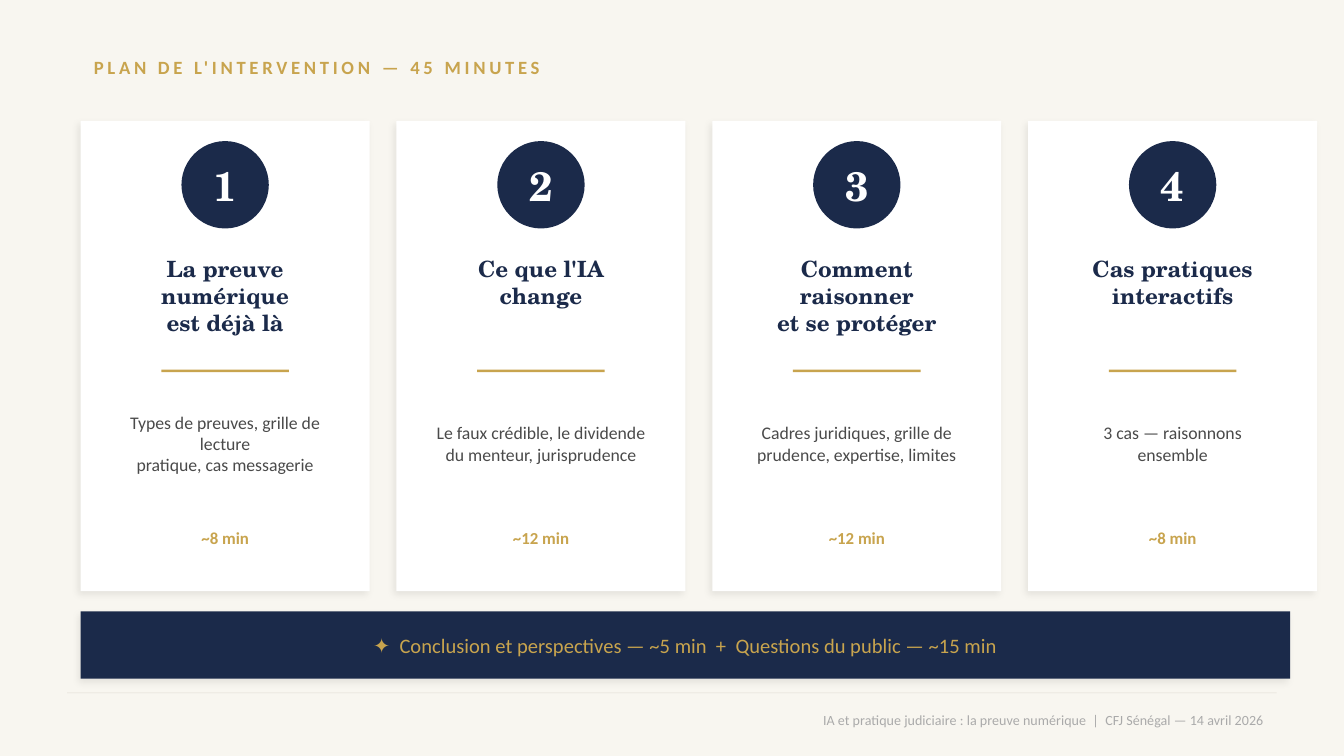
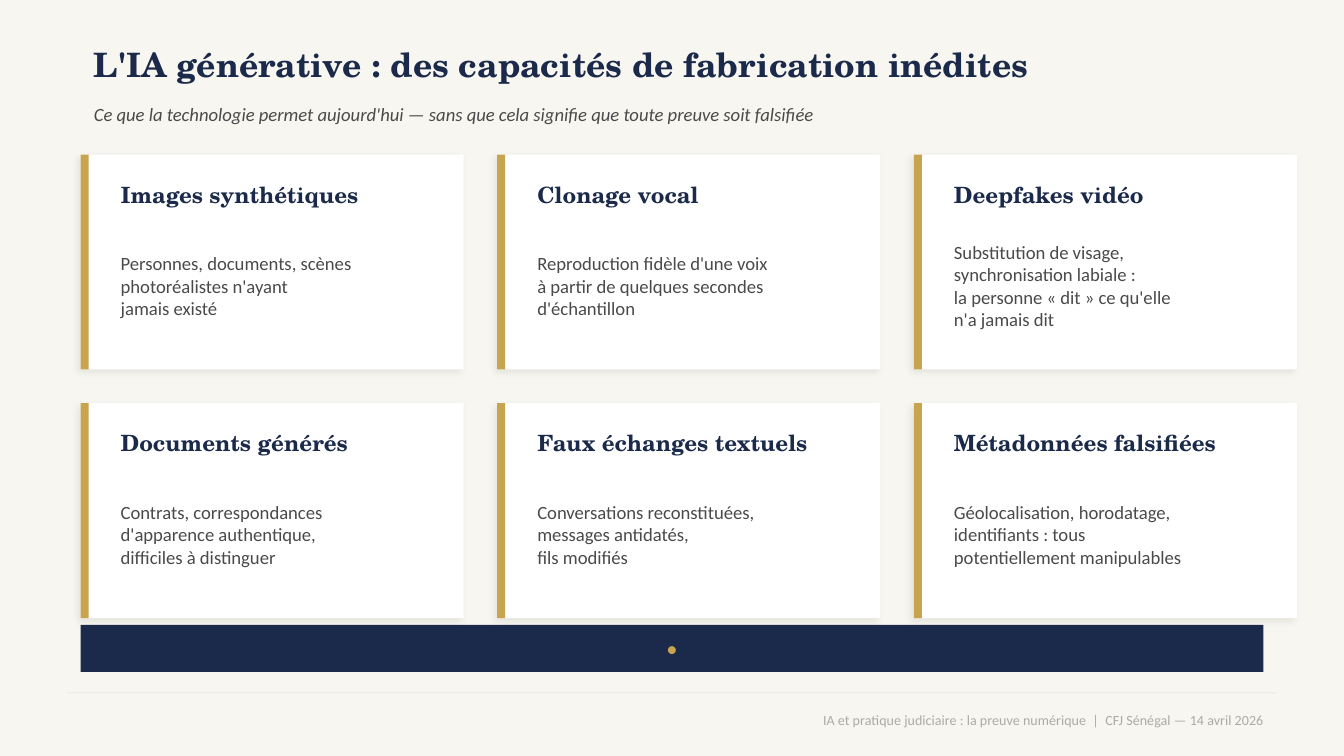
from pptx import Presentation
from pptx.dml.color import RGBColor
from pptx.enum.shapes import MSO_SHAPE
from pptx.enum.text import MSO_ANCHOR, PP_ALIGN
from pptx.oxml import parse_xml
from pptx.oxml.ns import nsdecls, qn
from pptx.util import Inches, Pt

COLORS = {
    "paper": "F8F6F0", "rule": "EFECE5", "white": "FFFFFF", "navy": "1B2A4A",
    "gold": "C8A44E", "body": "4A4A4A", "muted": "AAAAAA",
}
SERIF, SANS = "TeX Gyre Schola", "Calibri"
LEFT = 0.6
FOOTER = "IA et pratique judiciaire : la preuve numérique  |  CFJ Sénégal — 14 avril 2026"

PARTS = [
    ("La preuve numérique\nest déjà là",
     "Types de preuves, grille de lecture\npratique, cas messagerie", "~8 min"),
    ("Ce que l'IA\nchange",
     "Le faux crédible, le dividende\ndu menteur, jurisprudence", "~12 min"),
    ("Comment raisonner\net se protéger",
     "Cadres juridiques, grille de\nprudence, expertise, limites", "~12 min"),
    ("Cas pratiques\ninteractifs",
     "3 cas — raisonnons\nensemble", "~8 min"),
]
SKILLS = [
    ("Images synthétiques",
     "Personnes, documents, scènes\nphotoréalistes n'ayant\njamais existé"),
    ("Clonage vocal",
     "Reproduction fidèle d'une voix\nà partir de quelques secondes\nd'échantillon"),
    ("Deepfakes vidéo",
     "Substitution de visage,\nsynchronisation labiale :\n"
     "la personne « dit » ce qu'elle\nn'a jamais dit"),
    ("Documents générés",
     "Contrats, correspondances\nd'apparence authentique,\ndifficiles à distinguer"),
    ("Faux échanges textuels",
     "Conversations reconstituées,\nmessages antidatés,\nfils modifiés"),
    ("Métadonnées falsifiées",
     "Géolocalisation, horodatage,\nidentifiants : tous\npotentiellement manipulables"),
]


def rgb(name):
    return RGBColor.from_string(COLORS[name])


def add_block(slide, box, color, kind=MSO_SHAPE.RECTANGLE, shadow=False):
    shape = slide.shapes.add_shape(kind, *map(Inches, box))
    shape.fill.solid()
    shape.fill.fore_color.rgb = rgb(color)
    shape.line.fill.background()
    shape.shadow.inherit = False
    if shadow:
        effects = shape._element.spPr.find(qn("a:effectLst"))
        effects.append(parse_xml(
            f'<a:outerShdw {nsdecls("a")} blurRad="{Pt(4)}" dist="{Pt(2)}" '
            f'dir="{135 * 60000}" algn="bl" rotWithShape="0">'
            '<a:srgbClr val="000000"><a:alpha val="8000"/></a:srgbClr>'
            '</a:outerShdw>'))


def add_text(slide, box, text, size, color, font=SANS, bold=False, italic=False,
             align=PP_ALIGN.LEFT, anchor=MSO_ANCHOR.MIDDLE, spacing=0):
    frame = slide.shapes.add_textbox(*map(Inches, box)).text_frame
    frame.word_wrap = True
    frame.vertical_anchor = anchor
    frame.text = text
    for para in frame.paragraphs:
        para.alignment = align
        for run in para.runs:
            run.font.name = font
            run.font.size = Pt(size)
            run.font.bold = bold
            run.font.italic = italic
            run.font.color.rgb = rgb(color)
            if spacing:
                run.font._element.set("spc", str(spacing * 100))


def add_slide(deck):
    """Blank slide with the shared background and footer."""
    slide = deck.slides.add_slide(deck.slide_layouts[6])
    slide.background.fill.solid()
    slide.background.fill.fore_color.rgb = rgb("paper")
    add_block(slide, (0.5, 5.15, 9, 0.01), "rule")
    add_text(slide, (0.5, 5.18, 9, 0.35), FOOTER, 7.5, "muted", align=PP_ALIGN.RIGHT)
    return slide


def add_part(slide, left, number, title, detail, time):
    """Numbered column of the plan."""
    mid = PP_ALIGN.CENTER
    badge = (left + 0.75, 1.05, 0.65, 0.65)
    inner, width = left + 0.15, 1.85
    add_block(slide, (left, 0.9, 2.15, 3.5), "white", shadow=True)
    add_block(slide, badge, "navy", MSO_SHAPE.OVAL)
    add_text(slide, badge, str(number), 22, "white", SERIF, bold=True, align=mid)
    add_text(slide, (inner, 1.85, width, 0.85), title, 12, "navy", SERIF,
             bold=True, align=mid, anchor=MSO_ANCHOR.TOP)
    add_block(slide, (left + 0.6, 2.75, 0.95, 0.02), "gold")
    add_text(slide, (inner, 2.9, width, 0.8), detail, 9.5, "body", align=mid)
    add_text(slide, (inner, 3.8, width, 0.4), time, 9, "gold", bold=True, align=mid)


def add_skill(slide, left, top, title, detail):
    """Card with a gold edge."""
    add_block(slide, (left, top, 2.85, 1.6), "white", shadow=True)
    add_block(slide, (left, top, 0.06, 1.6), "gold")
    add_text(slide, (left + 0.2, top + 0.12, 2.5, 0.35), title, 12, "navy",
             SERIF, bold=True)
    add_text(slide, (left + 0.2, top + 0.5, 2.5, 0.95), detail, 10, "body")


def add_band(slide, top, width, height, inset, text, size, bold=False, shadow=False):
    """Navy band with centred gold text."""
    add_block(slide, (LEFT, top, width, height), "navy", shadow=shadow)
    add_text(slide, (LEFT + inset, top, width - 2 * inset, height), text, size,
             "gold", bold=bold, align=PP_ALIGN.CENTER)


def build_plan(deck):
    slide = add_slide(deck)
    add_text(slide, (LEFT, 0.3, 9, 0.4), "PLAN DE L'INTERVENTION — 45 MINUTES",
             10, "gold", bold=True, spacing=2)
    for index, part in enumerate(PARTS):
        add_part(slide, LEFT + index * 2.35, index + 1, *part)
    add_band(slide, 4.55, 9, 0.5, 0.2,
             "✦  Conclusion et perspectives — ~5 min  +  Questions du public — ~15 min",
             11, shadow=True)


def build_skills(deck):
    slide = add_slide(deck)
    add_text(slide, (LEFT, 0.25, 9, 0.45),
             "L'IA générative : des capacités de fabrication inédites",
             18, "navy", SERIF, bold=True)
    add_text(slide, (LEFT, 0.7, 9, 0.3),
             "Ce que la technologie permet aujourd'hui — "
             "sans que cela signifie que toute preuve soit falsifiée",
             10, "body", italic=True)
    for index, skill in enumerate(SKILLS):
        row, col = divmod(index, 3)
        add_skill(slide, LEFT + col * 3.1, 1.15 + row * 1.85, *skill)
    add_band(slide, 4.65, 8.8, 0.35, 0.15, "●", 9, bold=True)


def main():
    deck = Presentation()
    deck.slide_width = Inches(10)
    deck.slide_height = Inches(10 * 9 / 16)
    build_plan(deck)
    build_skills(deck)
    deck.save("out.pptx")


if __name__ == "__main__":
    main()
